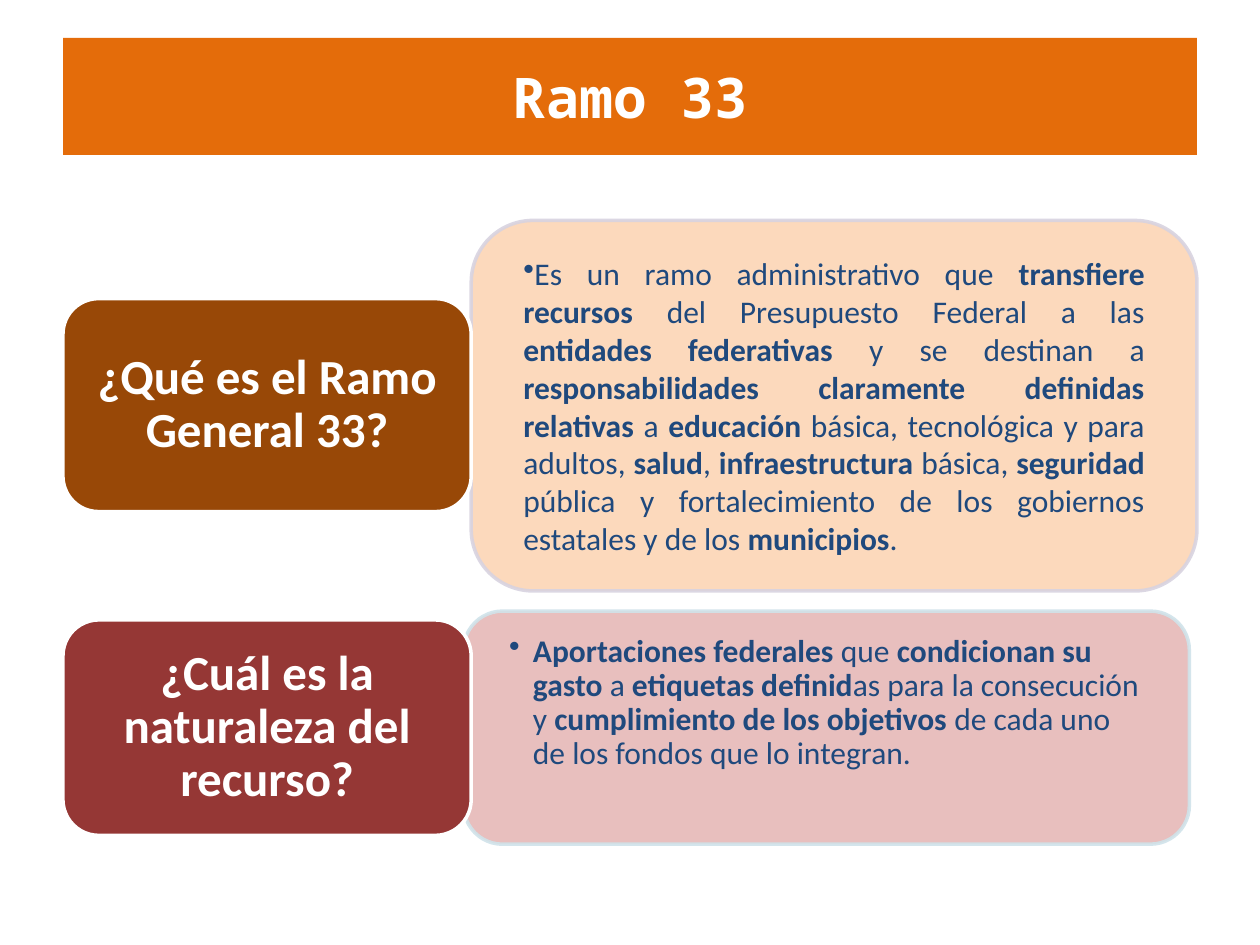
from lxml.etree import SubElement
from pptx import Presentation
from pptx.dml.color import RGBColor
from pptx.enum.shapes import MSO_SHAPE as Preset
from pptx.enum.text import MSO_ANCHOR as Anchor, PP_ALIGN as Align
from pptx.oxml.ns import qn
from pptx.util import Inches, Pt


def paint(colour_format, colour, opacity=100):
    """Set a hex colour on a fill, line fill or font, with opacity in percent."""
    if hasattr(colour_format, "solid"):
        colour_format.solid()
        target = colour_format.fore_color
    else:
        target = colour_format.color
    target.rgb = RGBColor.from_string(colour)
    if opacity < 100:
        element = colour_format._xPr.find(".//" + qn("a:srgbClr"))
        SubElement(element, qn("a:alpha"), val=str(opacity * 1000))


def add_card(box, fill, line, opacity, insets, anchor):
    """Add a rounded rectangle and return it with its first paragraph."""
    card = slide.shapes.add_shape(Preset.ROUNDED_RECTANGLE, *map(Inches, box))
    card.shadow.inherit = False
    paint(card.fill, fill, opacity)
    paint(card.line.fill, line, opacity)
    card.line.width = Pt(2)
    frame = card.text_frame
    frame.word_wrap = True
    frame.vertical_anchor = anchor
    frame.margin_left = frame.margin_right = Inches(insets[0])
    frame.margin_top = frame.margin_bottom = Inches(insets[1])
    return frame.paragraphs[0]


presentation = Presentation()
presentation.slide_width, presentation.slide_height = Inches(10), Inches(7.5)
slide = presentation.slides.add_slide(presentation.slide_layouts[5])

MARGIN = 0.5
QUESTION_WIDTH = 3.24
ANSWER_WIDTH = 5.76

title = slide.shapes.title
title.left, title.top = Inches(MARGIN), Inches(0.3)
title.width, title.height = Inches(QUESTION_WIDTH + ANSWER_WIDTH), Inches(0.93)
paint(title.fill, "E46C0A")
title.text_frame.text = "Ramo 33"
title.text_frame.vertical_anchor = Anchor.MIDDLE
heading = title.text_frame.paragraphs[0]
heading.alignment = Align.CENTER
heading.font.name, heading.font.size, heading.font.bold = "Noto Sans Mono", Pt(32), True
paint(heading.font.fill, "FFFFFF")

# Asterisks enclose the bold parts of each answer.
rows = [
    dict(
        question="¿Qué es el Ramo General 33?", question_fill="984807",
        question_top=2.37, question_height=1.69,
        answer="Es un ramo administrativo que *transfiere recursos *del Presupuesto "
               "Federal a las *entidades federativas *y se destinan a "
               "*responsabilidades claramente definidas relativas *a *educación* "
               "básica, tecnológica y para adultos, *salud*, *infraestructura* básica, "
               "*seguridad* pública y fortalecimiento de los gobiernos estatales y de "
               "los *municipios*.",
        answer_box=(3.74, 1.75, ANSWER_WIDTH, 2.94), answer_fill="FCD5B5",
        answer_line="D8D3E0", inset=0.14, anchor=Anchor.MIDDLE,
        alignment=Align.JUSTIFY, spacing=1.0, indent=0,
    ),
    dict(
        question="¿Cuál es la naturaleza del recurso?", question_fill="953735",
        question_top=4.92, question_height=1.71,
        answer="*Aportaciones federales *que *condicionan su gasto* a *etiquetas "
               "definid*as para la consecución y *cumplimiento de los objetivos *de "
               "cada uno de los fondos que lo integran.",
        answer_box=(3.68, 4.85, ANSWER_WIDTH, 1.85), answer_fill="E6B9B8",
        answer_line="D0E3EA", inset=0.1, anchor=Anchor.TOP,
        alignment=Align.LEFT, spacing=0.9, indent=0.19,
    ),
]

for row in rows:
    answer = add_card(row["answer_box"], row["answer_fill"], row["answer_line"], 90,
                      (0.27, row["inset"]), row["anchor"])
    answer.alignment = row["alignment"]
    answer.line_spacing = row["spacing"]
    answer.font.name, answer.font.size = "Calibri", Pt(18)
    paint(answer.font.fill, "1F497D")
    for index, part in enumerate(row["answer"].split("*")):
        if part:
            run = answer.add_run()
            run.text = part
            run.font.bold = index % 2 == 1
    properties = answer._p.get_or_add_pPr()
    properties.set("marL", str(Inches(row["indent"])))
    properties.set("indent", str(-Inches(row["indent"])))
    bullet = properties.makeelement(qn("a:buChar"), {"char": "•"})
    properties.find(qn("a:defRPr")).addprevious(bullet)

    question_box = (MARGIN, row["question_top"], QUESTION_WIDTH, row["question_height"])
    question = add_card(question_box, row["question_fill"], "FFFFFF", 100,
                        (0.12, 0.06), Anchor.MIDDLE)
    question.text = row["question"]
    question.alignment = Align.CENTER
    question.line_spacing = 0.9
    question.font.name, question.font.size, question.font.bold = "Calibri", Pt(28), True
    paint(question.font.fill, "FFFFFF")

presentation.save("out.pptx")
